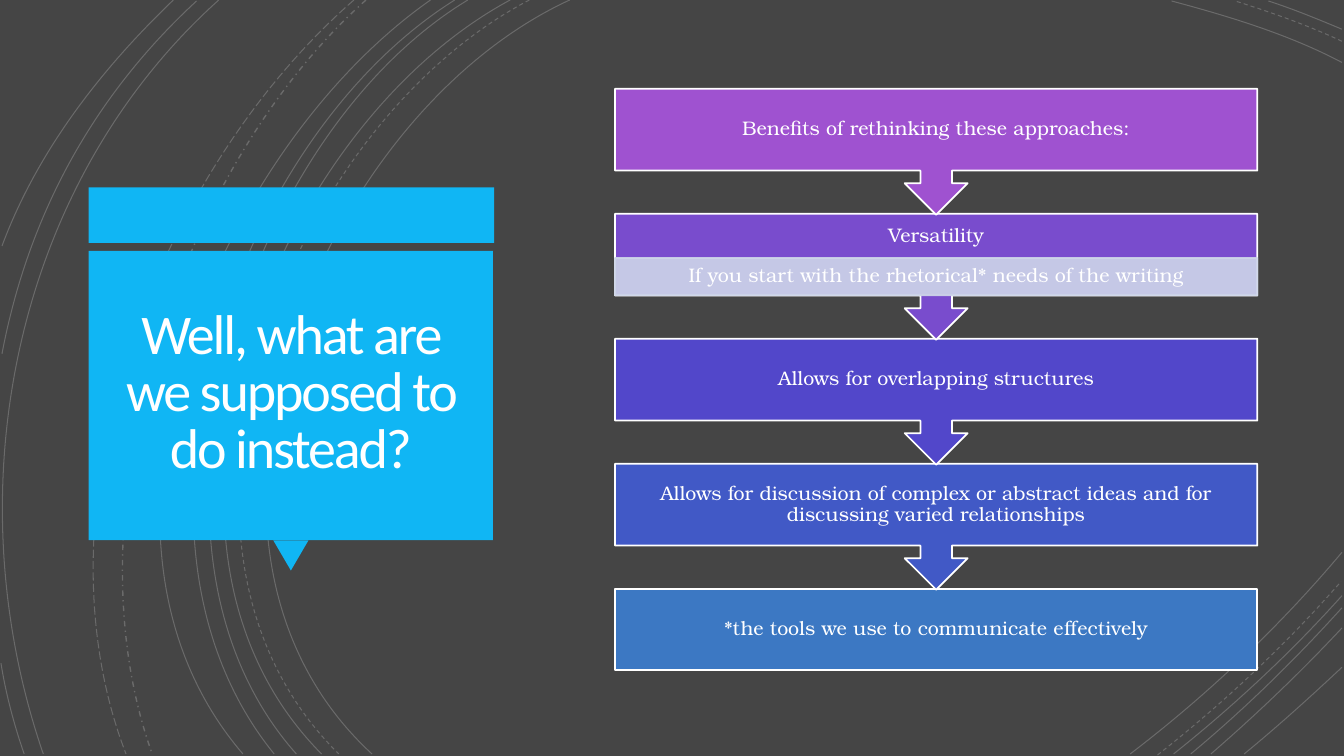
from lxml.etree import SubElement
from pptx import Presentation
from pptx.dml.color import RGBColor
from pptx.enum.dml import MSO_LINE
from pptx.enum.shapes import MSO_SHAPE
from pptx.enum.text import MSO_ANCHOR, PP_ALIGN
from pptx.oxml.ns import qn
from pptx.util import Inches, Pt

DARK, WHITE, CYAN, PALE = "454545", "FFFFFF", "10B6F4", "CED6E9"
TITLE = "Well, what are we supposed to do instead?"

# Flow steps: heading, fill, detail line
STEPS = [
    ("Benefits of rethinking these approaches:", "9F52D0", ""),
    ("Versatility", "794CCD",
     "If you start with the rhetorical* needs of the writing"),
    ("Allows for overlapping structures", "5247CA", ""),
    ("Allows for discussion of complex or abstract ideas and for "
     "discussing varied relationships", "4159C6", ""),
    ("*the tools we use to communicate effectively", "3C78C3", ""),
]

# Background arcs by dash style: start, two control points, end
ARCS = {
    MSO_LINE.SOLID: [
        [(5.65, 0), (3.15, 1.15), (1.43, 5.4), (3.69, 7.48)],
        [(13.31, 0.62), (12.78, 0.34), (12.18, 0.16), (11.62, 0.01)],
        [(11.21, 7.48), (11.97, 6.9), (12.69, 6.22), (13.31, 5.48)],
        [(5.06, 0), (2.7, 1.27), (1.1, 5.37), (3.19, 7.48)],
        [(13.31, 0.29), (13.07, 0.19), (12.83, 0.09), (12.58, 0.01)],
        [(11.64, 7.48), (12.23, 7.01), (12.8, 6.48), (13.31, 5.91)],
        [(4.64, 0), (2.44, 1.33), (1.1, 5.41), (2.94, 7.48)],
        [(11.81, 7.48), (12.34, 7.04), (12.84, 6.55), (13.31, 6.03)],
        [(4.51, 0), (2.31, 1.38), (0.97, 5.33), (2.72, 7.48)],
        [(12.01, 7.48), (12.46, 7.09), (12.9, 6.67), (13.31, 6.23)],
        [(4.27, 0), (2.17, 1.47), (0.53, 5.29), (2.41, 7.48)],
        [(12.34, 7.48), (12.67, 7.21), (12.99, 6.92), (13.31, 6.62)],
        [(2.17, 0), (0.11, 1.85), (-0.46, 4.9), (0.43, 7.48)],
        [(1.95, 0.01), (0.92, 0.96), (0.28, 2.14), (0.02, 3.51)],
        [(0.01, 6.58), (0.06, 6.89), (0.14, 7.19), (0.24, 7.48)],
        [(1.72, 0), (1, 0.69), (0.37, 1.5), (0.02, 2.44)],
    ],
    MSO_LINE.DASH: [
        [(5.25, 0), (2.85, 1.25), (1.23, 5.37), (3.36, 7.48)],
        [(13.31, 0.41), (12.97, 0.25), (12.6, 0.12), (12.25, 0.01)],
        [(11.48, 7.49), (12.13, 6.98), (12.75, 6.4), (13.3, 5.77)],
    ],
    MSO_LINE.DASH_DOT: [[(3.63, 0), (1.76, 1.66), (0.65, 5.09), (1.51, 7.48)]],
    MSO_LINE.LONG_DASH: [[(3.51, 0), (1.57, 1.69), (0.29, 4.99), (1.25, 7.48)]],
}

deck = Presentation()
deck.slide_width, deck.slide_height = Inches(13.33), Inches(7.5)
slide = deck.slides.add_slide(deck.slide_layouts[6])
shapes = slide.shapes


def paint(fill, color):
    fill.solid()
    fill.fore_color.rgb = RGBColor.from_string(color)


def fade(shape, percent):
    for color in shape._element.iter(qn("a:srgbClr")):
        SubElement(color, qn("a:alpha")).set("val", str(percent * 1000))


def add_arc(points, dash):
    spots = [(Inches(x), Inches(y)) for x, y in points]
    pen = shapes.build_freeform(*spots[0], scale=1.0)
    pen.add_line_segments(spots[1:], close=False)
    arc = pen.convert_to_shape()
    # Join the three segments into one cubic curve
    path = arc._element.find(".//" + qn("a:path"))
    curve = SubElement(path, qn("a:cubicBezTo"))
    for step in path.findall(qn("a:lnTo")):
        curve.append(step[0])
        path.remove(step)
    arc.shadow.inherit = False
    arc.fill.background()
    paint(arc.line.fill, WHITE)
    arc.line.width = Pt(1 if dash == MSO_LINE.DASH_DOT else 0.75)
    arc.line.dash_style = dash
    fade(arc, 20)


def add_block(kind, box, color, edge=None, turn=0):
    block = shapes.add_shape(kind, *map(Inches, box))
    block.rotation = turn
    block.shadow.inherit = False
    paint(block.fill, color)
    if edge:
        paint(block.line.fill, edge)
        block.line.width = Pt(1.25)
    else:
        block.line.fill.background()
    return block


def add_text(text, box, font, size, lead, side, rise):
    frame = shapes.add_textbox(*map(Inches, box)).text_frame
    frame.word_wrap = True
    frame.vertical_anchor = MSO_ANCHOR.MIDDLE
    frame.margin_left = frame.margin_right = Inches(side)
    frame.margin_top = frame.margin_bottom = Inches(rise)
    frame.text = text
    para = frame.paragraphs[0]
    para.alignment, para.line_spacing = PP_ALIGN.CENTER, lead
    run = para.runs[0]
    run.font.name, run.font.size = font, Pt(size)
    run.font.color.rgb = RGBColor.from_string(WHITE)
    return run


def add_label(text, top, height, rise=0.11):
    add_text(text, (LEFT, top, WIDE, height), "TeX Gyre Bonum", 14, 0.9,
             0.11, rise)


# Background
paint(slide.background.fill, DARK)
for dash, arcs in ARCS.items():
    for points in arcs:
        add_arc(points, dash)

# Title panel
add_block(MSO_SHAPE.RECTANGLE, (0.88, 1.86, 4.02, 0.55), CYAN)
add_block(MSO_SHAPE.ISOSCELES_TRIANGLE, (2.71, 5.36, 0.35, 0.3), CYAN, turn=180)
add_block(MSO_SHAPE.RECTANGLE, (0.88, 2.49, 4.01, 2.87), CYAN)
title = add_text(TITLE, (0.97, 2.57, 3.83, 2.69), "Calibri", 40, 0.85,
                 0.25, 0.25)
title.font._element.set("spc", "-150")

# Flow, last step first so that each arrow tip lies over the next box
LEFT, WIDE, FIRST, PITCH = 6.1, 6.37, 0.88, 1.24
BODY, CALL, HEAD, BAND = 0.81, 1.25, 0.44, 0.37
for index, (text, color, detail) in reversed(list(enumerate(STEPS))):
    top = FIRST + index * PITCH
    if index == len(STEPS) - 1:
        add_block(MSO_SHAPE.RECTANGLE, (LEFT, top, WIDE, BODY), color, WHITE)
    else:
        add_block(MSO_SHAPE.UP_ARROW_CALLOUT, (LEFT, top, WIDE, CALL), color,
                  WHITE, 180)
    add_label(text, top, HEAD if detail else BODY)
    if detail:
        band = add_block(MSO_SHAPE.RECTANGLE, (LEFT, top + HEAD, WIDE, BAND),
                         PALE, PALE)
        fade(band, 90)
        add_label(detail, top + HEAD, BAND, 0.02)

deck.save("out.pptx")
